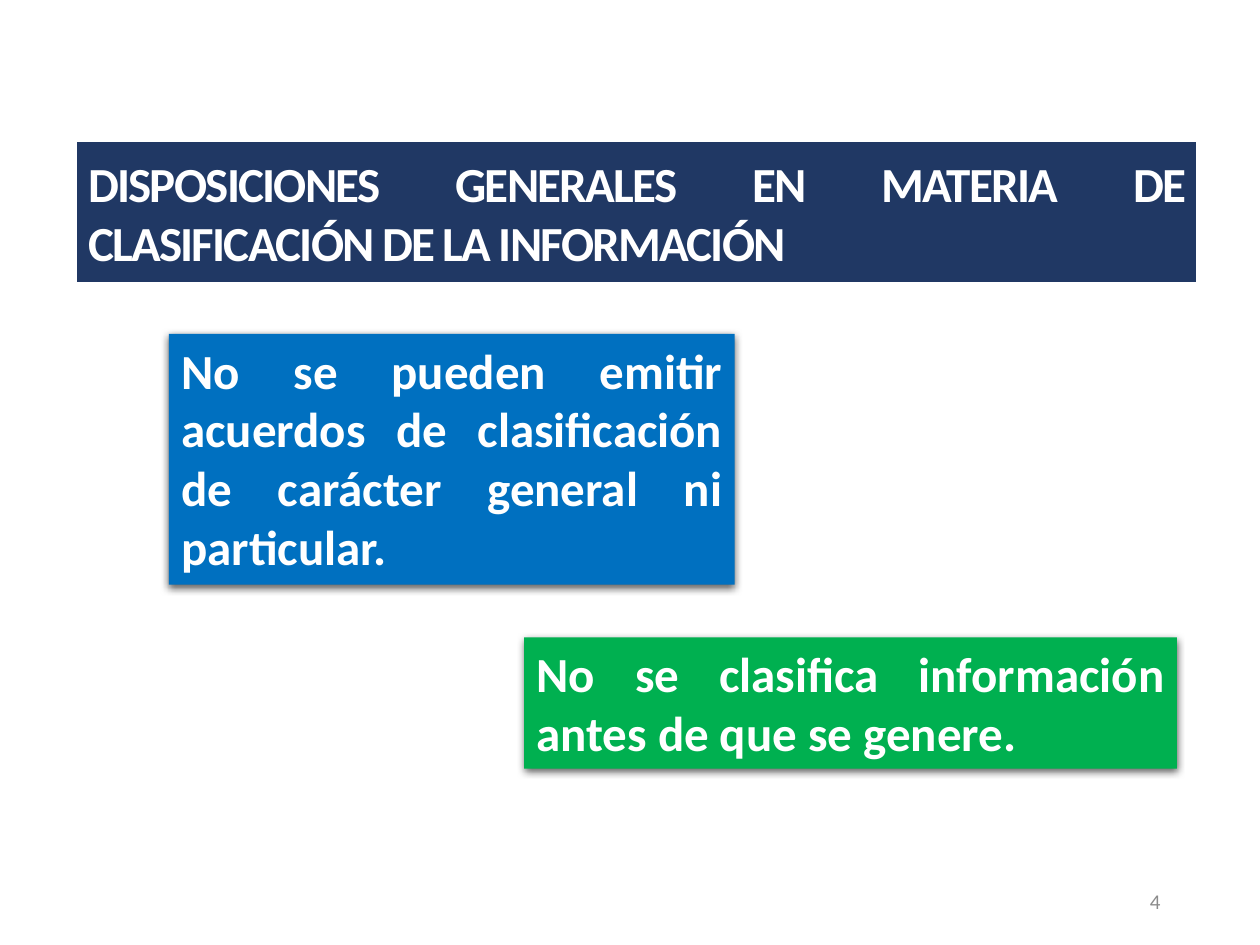
from dataclasses import dataclass

from lxml.etree import SubElement
from pptx import Presentation
from pptx.dml.color import RGBColor
from pptx.enum.shapes import MSO_SHAPE
from pptx.enum.text import MSO_ANCHOR, MSO_AUTO_SIZE, PP_ALIGN
from pptx.oxml.ns import qn
from pptx.shapes.autoshape import Shape
from pptx.slide import Slide
from pptx.text.text import Font
from pptx.util import Pt

COLORS = {
    "navy": "203864",
    "blue": "0070C0",
    "green": "00B050",
    "white": "FFFFFF",
    "gray": "8C8C8C",
    "black": "000000",
}


@dataclass(frozen=True)
class Rule:
    text: str
    left: float
    top: float
    width: float
    height: float
    fill: str


RULES = [
    Rule("No se pueden emitir acuerdos de clasificación de carácter general ni particular.",
         96.5, 190.8, 323.3, 143.3, "blue"),
    Rule("No se clasifica información antes de que se genere.",
         299.5, 364.3, 373, 74.9, "green"),
]


def color(name: str) -> RGBColor:
    return RGBColor.from_string(COLORS[name])


def place(shape: Shape, left: float, top: float, width: float, height: float) -> None:
    shape.left, shape.top = Pt(left), Pt(top)
    shape.width, shape.height = Pt(width), Pt(height)


def paint(shape: Shape, fill: str) -> None:
    shape.fill.solid()
    shape.fill.fore_color.rgb = color(fill)


def write(shape: Shape, text: str, size: float, ink: str, bold: bool,
          align: PP_ALIGN, anchor: MSO_ANCHOR) -> Font:
    frame = shape.text_frame
    frame.word_wrap = True
    frame.auto_size = MSO_AUTO_SIZE.NONE
    frame.vertical_anchor = anchor
    paragraph = frame.paragraphs[0]
    paragraph.alignment = align
    run = paragraph.add_run()
    run.text = text
    run.font.name = "Calibri"
    run.font.size = Pt(size)
    run.font.bold = bold
    run.font.color.rgb = color(ink)
    return run.font


def add_shadow(shape: Shape) -> None:
    shape.shadow.inherit = False
    effects = shape.element.spPr.find(qn("a:effectLst"))
    shadow = SubElement(effects, qn("a:outerShdw"), blurRad=str(Pt(4.5)),
                        dist=str(Pt(1.5)), dir="5400000", algn="ctr", rotWithShape="0")
    tint = SubElement(shadow, qn("a:srgbClr"), val=COLORS["black"])
    SubElement(tint, qn("a:alpha"), val="63000")


def add_heading(slide: Slide) -> None:
    heading = slide.shapes.title
    place(heading, 43.2, 80.6, 640.8, 81.4)
    paint(heading, "navy")
    heading.line.color.rgb = color("white")
    heading.line.width = Pt(1.5)
    font = write(heading,
                 "DISPOSICIONES GENERALES EN MATERIA DE CLASIFICACIÓN DE LA INFORMACIÓN",
                 28, "white", True, PP_ALIGN.JUSTIFY, MSO_ANCHOR.MIDDLE)
    font._element.set("spc", "-100")


def add_rule(slide: Slide, rule: Rule) -> None:
    card = slide.shapes.add_shape(MSO_SHAPE.RECTANGLE, Pt(rule.left), Pt(rule.top),
                                  Pt(rule.width), Pt(rule.height))
    paint(card, rule.fill)
    card.line.fill.background()
    add_shadow(card)
    write(card, rule.text, 28, "white", True, PP_ALIGN.JUSTIFY, MSO_ANCHOR.TOP)


def add_page_number(slide: Slide) -> None:
    number = slide.shapes.add_textbox(Pt(508.3), Pt(500.4), Pt(162), Pt(28.8))
    write(number, "4", 12, "gray", False, PP_ALIGN.RIGHT, MSO_ANCHOR.MIDDLE)


def main() -> None:
    deck = Presentation()
    deck.slide_width, deck.slide_height = Pt(720), Pt(540)
    slide = deck.slides.add_slide(deck.slide_layouts[5])
    add_heading(slide)
    for rule in RULES:
        add_rule(slide, rule)
    add_page_number(slide)
    deck.save("out.pptx")


if __name__ == "__main__":
    main()
